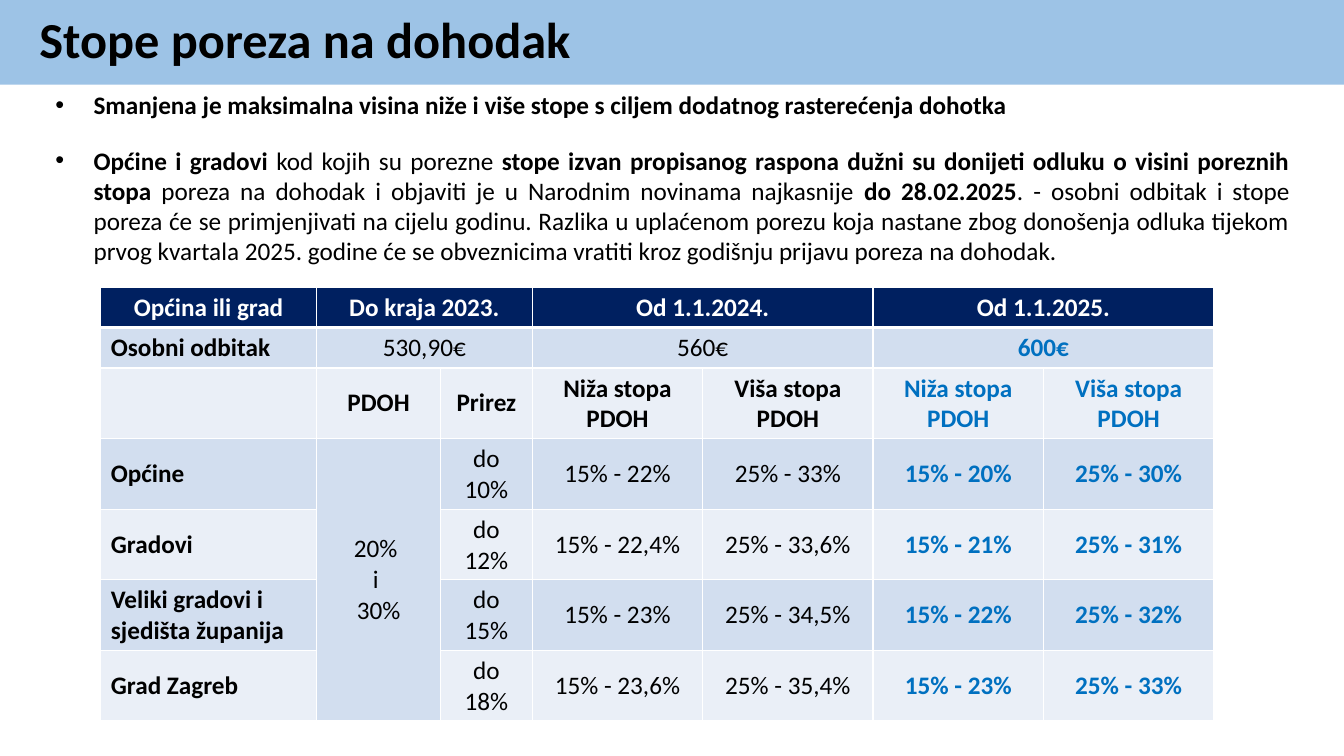
from dataclasses import dataclass

from lxml.etree import SubElement
from pptx import Presentation
from pptx.dml.color import RGBColor
from pptx.enum.shapes import MSO_SHAPE
from pptx.enum.text import MSO_ANCHOR, PP_ALIGN
from pptx.oxml import parse_xml
from pptx.oxml.ns import nsdecls, qn
from pptx.util import Inches, Pt


@dataclass(frozen=True)
class Theme:
    face: str = "Calibri"
    ink: str = "000000"
    white: str = "FFFFFF"
    bar: str = "9DC3E6"
    navy: str = "002060"
    accent: str = "0070C0"
    bands: tuple = ("D2DEEF", "EAEFF7")
    title: int = 36
    body: int = 18
    thin: int = 1
    thick: int = 3


THEME = Theme()

POINTS = [
    [("Smanjena je maksimalna visina niže i više stope s ciljem dodatnog rasterećenja dohotka", True)],
    [
        ("Općine i gradovi ", True),
        ("kod kojih su porezne ", False),
        ("stope izvan propisanog raspona dužni su donijeti odluku o visini poreznih stopa", True),
        (" poreza na dohodak i objaviti je u Narodnim novinama najkasnije ", False),
        ("do 28.02.2025", True),
        (". - osobni odbitak i stope poreza će se primjenjivati na cijelu godinu. "
         "Razlika u uplaćenom porezu koja nastane zbog donošenja odluka tijekom "
         "prvog kvartala 2025. godine će se obveznicima vratiti kroz godišnju "
         "prijavu poreza na dohodak.", False),
    ],
]

# None continues a merged cell.
RATES = [
    ["Općina ili grad", "Do kraja 2023.", None, "Od 1.1.2024.", None, "Od 1.1.2025.", None],
    ["Osobni odbitak", "530,90€", None, "560€", None, "600€", None],
    ["", "PDOH", "Prirez"] + ["Niža stopa PDOH", "Viša stopa PDOH"] * 2,
    ["Općine", "20% \ni \n30%", "do 10%", "15% - 22%", "25% - 33%", "15% - 20%", "25% - 30%"],
    ["Gradovi", None, "do 12%", "15% - 22,4%", "25% - 33,6%", "15% - 21%", "25% - 31%"],
    ["Veliki gradovi i sjedišta županija", None, "do 15%", "15% - 23%", "25% - 34,5%",
     "15% - 22%", "25% - 32%"],
    ["Grad Zagreb", None, "do 18%", "15% - 23,6%", "25% - 35,4%", "15% - 23%", "25% - 33%"],
]
WIDTHS = [2.14, 1.23, 0.91] + [1.69] * 4
HEIGHTS = [0.38] * 2 + [0.67] * 5
HEAD, SUBHEAD = 0, 2  # rows
NEW = 5  # first column of the 2025 rates


def apply(item, values):
    for name, value in values.items():
        setattr(item, name, value)


def style(run, size, color, bold):
    apply(run.font, {"name": THEME.face, "size": Pt(size), "bold": bold})
    run.font.color.rgb = RGBColor.from_string(color)


def paint(item, color):
    item.fill.solid()
    item.fill.fore_color.rgb = RGBColor.from_string(color)


def add_title(slide, box, text):
    bar = slide.shapes.add_shape(MSO_SHAPE.RECTANGLE, *map(Inches, box))
    bar.shadow.inherit = False
    paint(bar, THEME.bar)
    bar.line.fill.background()
    frame = bar.text_frame
    apply(frame, {"word_wrap": True, "vertical_anchor": MSO_ANCHOR.MIDDLE,
                  "margin_left": Inches(0.39)})
    para = frame.paragraphs[0]
    apply(para, {"text": text, "alignment": PP_ALIGN.LEFT, "line_spacing": 0.9})
    style(para.runs[0], THEME.title, THEME.ink, True)


def add_points(slide, box, points):
    frame = slide.shapes.add_textbox(*map(Inches, box)).text_frame
    frame.word_wrap = True
    for index, parts in enumerate(points):
        para = frame.add_paragraph() if index else frame.paragraphs[0]
        apply(para, {"alignment": PP_ALIGN.JUSTIFY,
                     "space_before": Pt(6 if index else 0),
                     "space_after": Pt(0 if index else 12)})
        props = para._p.get_or_add_pPr()
        props.set("marL", str(Inches(0.38)))
        props.set("indent", str(-Inches(0.38)))
        SubElement(props, qn("a:buFont"), typeface="Arial")
        SubElement(props, qn("a:buChar"), char="•")
        for text, bold in parts:
            run = para.add_run()
            run.text = text
            style(run, THEME.body, THEME.ink, bold)


def set_edges(cell, row):
    """Draw white borders, with a thick rule under the header."""
    edges = {"L": THEME.thin, "R": THEME.thin,
             "T": THEME.thick if row == HEAD + 1 else THEME.thin,
             "B": THEME.thick if row == HEAD else THEME.thin}
    props = cell._tc.get_or_add_tcPr()
    for index, (side, width) in enumerate(edges.items()):
        props.insert(index, parse_xml(
            f'<a:ln{side} {nsdecls("a")} w="{Pt(width)}"><a:solidFill>'
            f'<a:srgbClr val="{THEME.white}"/></a:solidFill></a:ln{side}>'))


def cell_look(row, col):
    """Return the text colour and weight of a table cell."""
    if row == HEAD:
        return THEME.white, True
    if col >= NEW:
        return THEME.accent, True
    return THEME.ink, col == 0 or row == SUBHEAD


def fill_cell(cell, row, col, text):
    paint(cell, THEME.navy if row == HEAD else THEME.bands[(row - 1) % 2])
    set_edges(cell, row)
    cell.vertical_anchor = MSO_ANCHOR.MIDDLE
    para = cell.text_frame.paragraphs[0]
    left = col == 0 and row != HEAD
    apply(para, {"text": text or "",
                 "alignment": PP_ALIGN.LEFT if left else PP_ALIGN.CENTER})
    for run in para.runs:
        style(run, THEME.body, *cell_look(row, col))


def add_rates(slide, box, rates):
    frame = slide.shapes.add_table(len(rates), len(WIDTHS), *map(Inches, box))
    table = frame.table
    table.horz_banding = False
    for col, width in zip(table.columns, WIDTHS):
        col.width = Inches(width)
    for line, height in zip(table.rows, HEIGHTS):
        line.height = Inches(height)
    for row, texts in enumerate(rates):
        for col, text in enumerate(texts):
            fill_cell(table.cell(row, col), row, col, text)
    for row in (HEAD, HEAD + 1):
        for col in (1, 3, 5):
            table.cell(row, col).merge(table.cell(row, col + 1))
    table.cell(SUBHEAD + 1, 1).merge(table.cell(len(rates) - 1, 1))


def main():
    deck = Presentation()
    apply(deck, {"slide_width": Inches(13.33), "slide_height": Inches(7.5)})
    slide = deck.slides.add_slide(deck.slide_layouts[6])
    add_points(slide, (0.45, 0.84, 12.44, 2.74), POINTS)
    add_title(slide, (0, 0, 13.33, 0.84), "Stope poreza na dohodak")
    add_rates(slide, (1, 2.85, sum(WIDTHS), sum(HEIGHTS)), RATES)
    deck.save("out.pptx")


if __name__ == "__main__":
    main()
